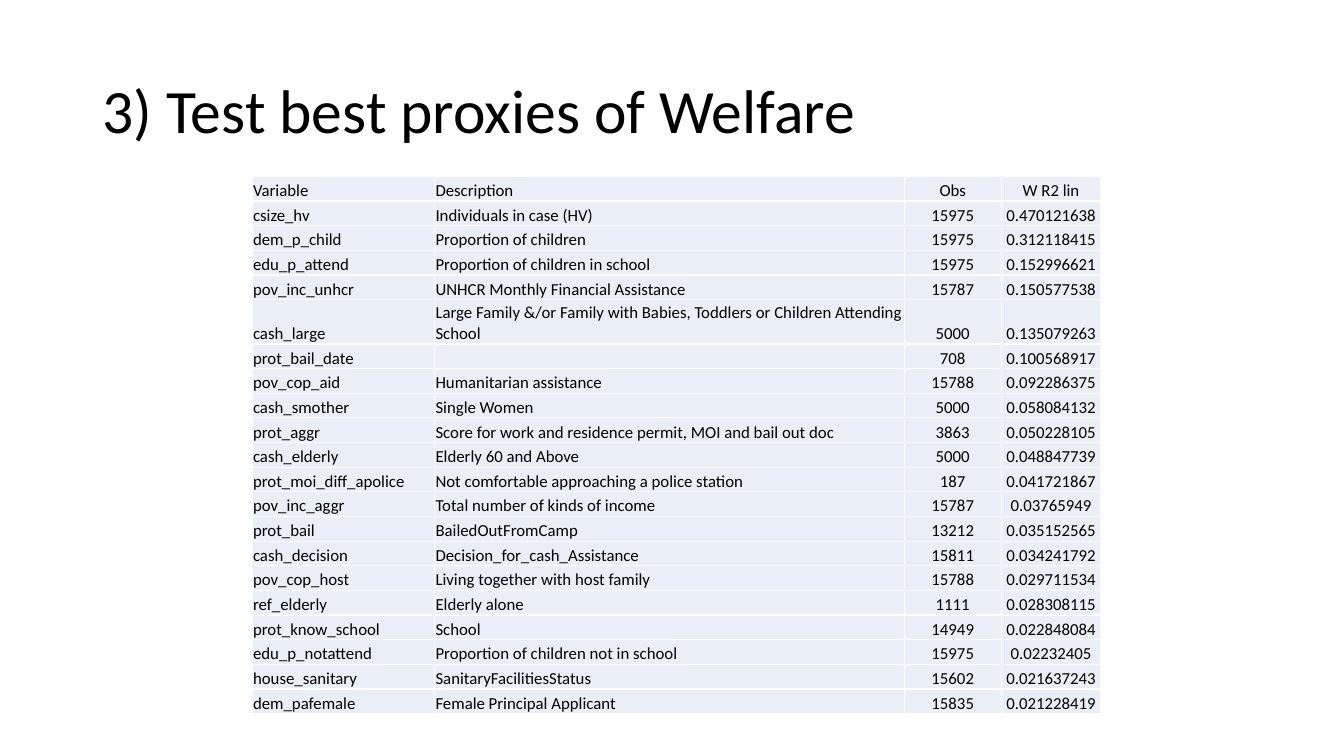
import pptx
import pptx.util
import pptx.dml.color
import pptx.enum.text
import pptx.oxml.ns
from lxml import etree

Inches, Pt = pptx.util.Inches, pptx.util.Pt
qn = pptx.oxml.ns.qn
PP_ALIGN = pptx.enum.text.PP_ALIGN
ANCHOR = pptx.enum.text.MSO_ANCHOR

# Content
TITLE = "3) Test best proxies of Welfare"
PROXIES = [
    ("Variable", "Description", "Obs", "W R2 lin"),
    ("csize_hv", "Individuals in case (HV)", "15975", "0.470121638"),
    ("dem_p_child", "Proportion of children", "15975", "0.312118415"),
    ("edu_p_attend", "Proportion of children in school", "15975", "0.152996621"),
    ("pov_inc_unhcr", "UNHCR Monthly Financial Assistance", "15787", "0.150577538"),
    ("cash_large", "Large Family &/or Family with Babies, Toddlers or Children Attending School",
     "5000", "0.135079263"),
    ("prot_bail_date", "", "708", "0.100568917"),
    ("pov_cop_aid", "Humanitarian assistance", "15788", "0.092286375"),
    ("cash_smother", "Single Women", "5000", "0.058084132"),
    ("prot_aggr", "Score for work and residence permit, MOI and bail out doc", "3863", "0.050228105"),
    ("cash_elderly", "Elderly 60 and Above", "5000", "0.048847739"),
    ("prot_moi_diff_apolice", "Not comfortable approaching a police station", "187", "0.041721867"),
    ("pov_inc_aggr", "Total number of kinds of income", "15787", "0.03765949"),
    ("prot_bail", "BailedOutFromCamp", "13212", "0.035152565"),
    ("cash_decision", "Decision_for_cash_Assistance", "15811", "0.034241792"),
    ("pov_cop_host", "Living together with host family", "15788", "0.029711534"),
    ("ref_elderly", "Elderly alone", "1111", "0.028308115"),
    ("prot_know_school", "School", "14949", "0.022848084"),
    ("edu_p_notattend", "Proportion of children not in school", "15975", "0.02232405"),
    ("house_sanitary", "SanitaryFacilitiesStatus", "15602", "0.021637243"),
    ("dem_pafemale", "Female Principal Applicant", "15835", "0.021228419"),
]

THEME = {"font": "Calibri", "text": "000000", "cell": "EAEFF7", "border": "FFFFFF",
         "title_size": 44, "table_size": 12, "border_width": 1}

# Layout, in inches
TITLE_BOX = (0.92, 0.4, 11.5, 1.45)
TABLE_LEFT, TABLE_TOP, TABLE_HEIGHT = 2.5, 1.75, 5.33
COLUMN_WIDTHS = (1.81, 4.66, 0.96, 0.99)
COLUMN_ALIGNS = (PP_ALIGN.LEFT, PP_ALIGN.LEFT, PP_ALIGN.CENTER, PP_ALIGN.CENTER)
WRAPPED_ROW, WRAPPED_HEIGHT = 5, 0.44
ROW_HEIGHT = (TABLE_HEIGHT - WRAPPED_HEIGHT) / (len(PROXIES) - 1)
CELL_INSET = 0.01


def rgb(name):
    return pptx.dml.color.RGBColor.from_string(THEME[name])


def format_runs(para, size):
    for span in para.runs:
        span.font.name = THEME["font"]
        span.font.size = Pt(size)
        span.font.color.rgb = rgb("text")


def add_borders(cell):
    properties = cell._tc.get_or_add_tcPr()
    for side in ("lnL", "lnR", "lnT", "lnB"):
        line = etree.SubElement(properties, qn(f"a:{side}"), w=str(Pt(THEME["border_width"])))
        fill = etree.SubElement(line, qn("a:solidFill"))
        etree.SubElement(fill, qn("a:srgbClr"), val=THEME["border"])


def fill_cell(cell, text, align):
    cell.margin_left = cell.margin_right = cell.margin_top = Inches(CELL_INSET)
    cell.margin_bottom = 0
    cell.vertical_anchor = ANCHOR.BOTTOM
    add_borders(cell)
    cell.fill.solid()
    cell.fill.fore_color.rgb = rgb("cell")
    para = cell.text_frame.paragraphs[0]
    para.text = text
    para.alignment = align
    format_runs(para, THEME["table_size"])
    if not text:  # an empty cell must not stretch its row
        etree.SubElement(para._p, qn("a:endParaRPr"), sz=str(THEME["table_size"] * 100))


def add_title(page):
    box = page.shapes.add_textbox(*map(Inches, TITLE_BOX))
    frame = box.text_frame
    frame.word_wrap = True
    frame.vertical_anchor = ANCHOR.MIDDLE
    frame.text = TITLE
    para = frame.paragraphs[0]
    para.line_spacing = 0.9
    format_runs(para, THEME["title_size"])


def add_proxy_table(page):
    table = page.shapes.add_table(
        len(PROXIES), len(COLUMN_WIDTHS), Inches(TABLE_LEFT), Inches(TABLE_TOP),
        Inches(sum(COLUMN_WIDTHS)), Inches(TABLE_HEIGHT)).table
    table.first_row = table.horz_banding = False
    for column, width in zip(table.columns, COLUMN_WIDTHS):
        column.width = Inches(width)
    for index, (row, values) in enumerate(zip(table.rows, PROXIES)):
        row.height = Inches(WRAPPED_HEIGHT if index == WRAPPED_ROW else ROW_HEIGHT)
        for cell, text, align in zip(row.cells, values, COLUMN_ALIGNS):
            fill_cell(cell, text, align)


def main():
    deck = pptx.Presentation()
    deck.slide_width, deck.slide_height = Inches(13.33), Inches(7.5)
    page = deck.slides.add_slide(deck.slide_layouts[6])
    add_title(page)
    add_proxy_table(page)
    deck.save("out.pptx")


if __name__ == "__main__":
    main()
